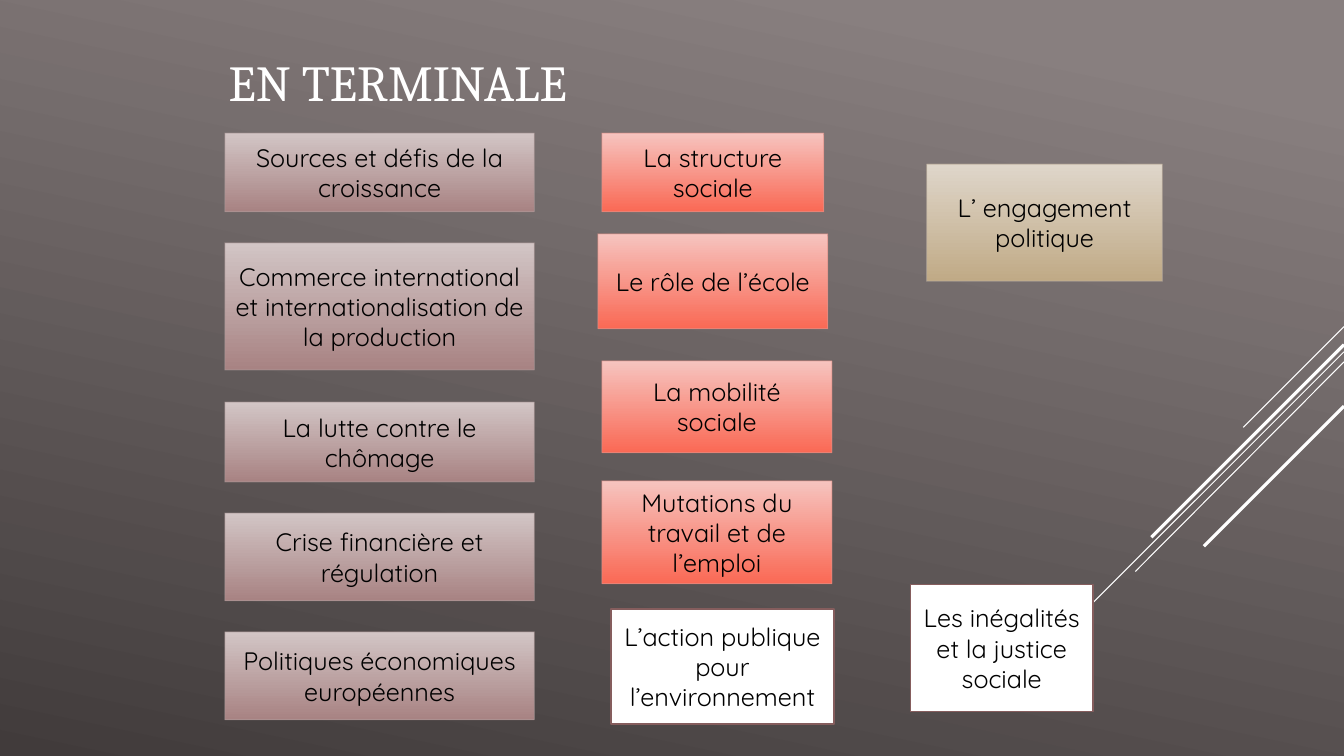
"""Builds the slide listing the Terminale topics as coloured boxes."""
from lxml.etree import SubElement
from pptx import Presentation
from pptx.dml.color import RGBColor
from pptx.enum.shapes import MSO_CONNECTOR, MSO_SHAPE
from pptx.enum.text import MSO_ANCHOR, PP_ALIGN
from pptx.oxml.ns import qn
from pptx.util import Inches, Pt


def paint(fill, *tones, start=0, angle=90):
    if len(tones) == 1:
        fill.solid()
        fill.fore_color.rgb = RGBColor.from_string(tones[0])
        return
    fill.gradient()
    fill.gradient_angle = 360 - angle
    for stop, tone, place in zip(fill.gradient_stops, tones, (start, 1)):
        stop.color.rgb = RGBColor.from_string(tone)
        stop.position = place


def write(shape, text, font="Quicksand", size=18, tone="000000", align=PP_ALIGN.CENTER):
    frame = shape.text_frame
    frame.word_wrap = True
    frame.vertical_anchor = MSO_ANCHOR.MIDDLE
    para = frame.paragraphs[0]
    para.alignment = align
    run = para.add_run()
    run.text = text
    run.font.name = font
    run.font.size = Pt(size)
    paint(run.font.fill, tone)


deck = Presentation()
deck.slide_width, deck.slide_height = Inches(13.33), Inches(7.5)
slide = deck.slides.add_slide(deck.slide_layouts[6])
paint(slide.background.fill, "887F7F", "413B3B", start=0.1, angle=102)

edge = 13.33
for top, left, low, width in [
    (3.24, 12.33, 4.24, 0.75),
    (3.49, 10.07, 6.75, 0.75),
    (3.59, 11.26, 5.67, 0.75),
    (3.42, 11.42, 5.33, 2.25),
    (4.03, 11.94, 5.42, 2.25),
]:
    ray = slide.shapes.add_connector(
        MSO_CONNECTOR.STRAIGHT, Inches(edge), Inches(top), Inches(left), Inches(low))
    paint(ray.line.fill, "FFFFFF")
    ray.line.width = Pt(width)
    SubElement(ray._element.spPr, qn("a:effectLst"))

title = slide.shapes.add_textbox(Inches(2.17), Inches(0.3), Inches(9), Inches(1.02))
write(title, "EN TERMINALE", font="Cambria", size=36, tone="FFFFFF", align=PP_ALIGN.LEFT)

mauve = ("D2C5C5", "A88383"), "AD9A9A"
coral = ("F6C4BF", "FA6955"), "DF928A"
sand = ("DFD6CA", "C0AA86"), "BEB1A0"
white = ("FFFFFF",), "855D5D"
topics = [
    ("Sources et défis de la croissance", 2.23, 1.32, 3.07, 0.78, mauve),
    ("Commerce international et internationalisation de la production",
     2.23, 2.41, 3.07, 1.26, mauve),
    ("La lutte contre le chômage", 2.23, 3.99, 3.07, 0.79, mauve),
    ("Crise financière et régulation", 2.23, 5.09, 3.07, 0.87, mauve),
    ("Politiques économiques européennes", 2.23, 6.27, 3.07, 0.87, mauve),
    ("La structure sociale", 5.97, 1.32, 2.2, 0.78, coral),
    ("Le rôle de l’école", 5.93, 2.32, 2.28, 0.94, coral),
    ("La mobilité sociale", 5.97, 3.58, 2.28, 0.91, coral),
    ("Mutations du travail et de l’emploi", 5.97, 4.77, 2.28, 1.02, coral),
    ("L’ engagement politique", 9.19, 1.63, 2.34, 1.16, sand),
    ("Les inégalités et la justice sociale", 9.03, 5.8, 1.81, 1.26, white),
    ("L’action publique pour l’environnement", 6.06, 6.04, 2.21, 1.14, white),
]
for text, left, top, width, height, (tones, rim) in topics:
    box = slide.shapes.add_shape(
        MSO_SHAPE.RECTANGLE, Inches(left), Inches(top), Inches(width), Inches(height))
    box.shadow.inherit = False
    paint(box.fill, *tones)
    paint(box.line.fill, rim)
    box.line.width = Pt(1.25)
    if len(tones) == 2:
        box.line.width = Pt(0.75)
        tint = box._element.xpath(".//a:ln//a:srgbClr")[0]
        SubElement(tint, qn("a:alpha"), val="60000")
    write(box, text)

deck.save("out.pptx")
